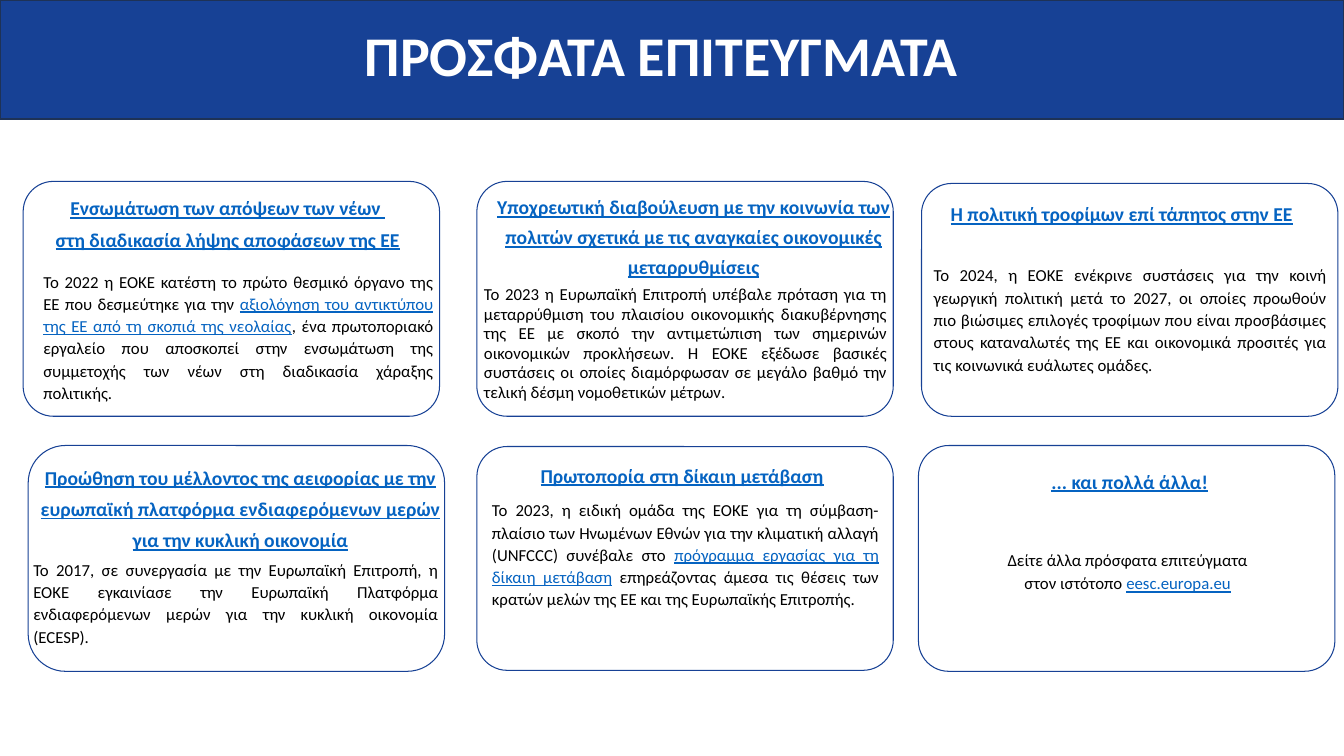
from dataclasses import dataclass
from pptx import Presentation
from pptx.dml.color import RGBColor
from pptx.enum.shapes import MSO_SHAPE
from pptx.enum.text import MSO_ANCHOR, MSO_AUTO_SIZE, PP_ALIGN
from pptx.util import Inches, Pt


@dataclass
class Theme:
    font: str = "Calibri"
    blue: RGBColor = RGBColor(0x17, 0x41, 0x95)
    edge: RGBColor = RGBColor(0x1E, 0x32, 0x56)
    link: RGBColor = RGBColor(0x05, 0x63, 0xC1)
    black: RGBColor = RGBColor(0, 0, 0)
    white: RGBColor = RGBColor(255, 255, 255)
    title: Pt = Pt(40)
    head: Pt = Pt(14)
    body: Pt = Pt(12)


theme = Theme()
CENTER, JUSTIFY = PP_ALIGN.CENTER, PP_ALIGN.JUSTIFY


def set_frame(shape, place):
    """Put a text shape in place, with no insets, and return its frame."""
    shape.left, shape.top, shape.width, shape.height = map(Inches, place)
    frame = shape.text_frame
    frame.word_wrap = True
    frame.auto_size = MSO_AUTO_SIZE.NONE
    frame.vertical_anchor = MSO_ANCHOR.TOP
    frame.margin_left = frame.margin_right = 0
    frame.margin_top = frame.margin_bottom = 0
    return frame


def style(para, size, color, space, align, bold=False):
    para.alignment = align
    para.line_spacing = Pt(space)
    para.space_before = para.space_after = Pt(0)
    font = para.font
    font.name, font.size, font.bold = theme.font, size, bold
    font.color.rgb = color


deck = Presentation()
deck.slide_width, deck.slide_height = Inches(13.33), Inches(7.5)
slide = deck.slides.add_slide(deck.slide_layouts[5])
shapes = slide.shapes

# Banner, behind the title
banner = shapes.add_shape(MSO_SHAPE.RECTANGLE, 0, 0, deck.slide_width, Inches(1.18))
banner.shadow.inherit = False
banner.fill.solid()
banner.fill.fore_color.rgb = theme.blue
banner.line.color.rgb = theme.edge
banner.line.width = Pt(1)
title = shapes.title
title._element.addprevious(banner._element)

# Title
frame = set_frame(title, (2.82, 0.41, 7.48, 0.5))
frame.text = "ΠΡΟΣΦΑΤΑ ΕΠΙΤΕΥΓΜΑΤΑ"
style(frame.paragraphs[0], theme.title, theme.white, 33, CENTER, True)

# Cards: outline and corner radius; heading place, spacing and lines;
# body place, spacing, alignment and parts (every second part is a link)
cards = [
    ((0.23, 1.8, 4.13, 2.33), 0.3,
     (0.27, 1.87, 3.98, 0.71), 22.4,
     ["Ενσωμάτωση των απόψεων των νέων ",
      "στη διαδικασία λήψης αποφάσεων της ΕΕ"],
     (0.43, 2.67, 3.87, 1.58), 15.9, JUSTIFY,
     ["Το 2022 η ΕΟΚΕ κατέστη το πρώτο θεσμικό όργανο της ΕΕ που "
      "δεσμεύτηκε για την ",
      "αξιολόγηση του αντικτύπου της ΕΕ από τη σκοπιά της νεολαίας",
      ", ένα πρωτοποριακό εργαλείο που αποσκοπεί στην ενσωμάτωση της "
      "συμμετοχής των νέων στη διαδικασία χάραξης πολιτικής."]),
    ((4.73, 1.8, 4.13, 2.33), 0.3,
     (4.88, 1.87, 4, 1.45), 21.5,
     ["Υποχρεωτική διαβούλευση με την κοινωνία των πολιτών σχετικά με τις "
      "αναγκαίες οικονομικές μεταρρυθμίσεις"],
     (4.8, 2.82, 4, 1.4), 14, JUSTIFY,
     ["Το 2023 η Ευρωπαϊκή Επιτροπή υπέβαλε πρόταση για τη μεταρρύθμιση του "
      "πλαισίου οικονομικής διακυβέρνησης της ΕΕ με σκοπό την αντιμετώπιση "
      "των σημερινών οικονομικών προκλήσεων. Η ΕΟΚΕ εξέδωσε βασικές "
      "συστάσεις οι οποίες διαμόρφωσαν σε μεγάλο βαθμό την τελική δέσμη "
      "νομοθετικών μέτρων."]),
    ((9.14, 1.82, 4.13, 2.31), 0.3,
     (9.15, 1.93, 3.95, 0.34), 22.4,
     ["Η πολιτική τροφίμων επί τάπητος στην ΕΕ"],
     (9.26, 2.61, 3.9, 1.32), 15.9, JUSTIFY,
     ["Το 2024, η ΕΟΚΕ ενέκρινε συστάσεις για την κοινή γεωργική πολιτική "
      "μετά το 2027, οι οποίες προωθούν πιο βιώσιμες επιλογές τροφίμων που "
      "είναι προσβάσιμες στους καταναλωτές της ΕΕ και οικονομικά προσιτές "
      "για τις κοινωνικά ευάλωτες ομάδες."]),
    ((0.28, 4.42, 4.13, 2.24), 0.37,
     (0.32, 4.54, 4.13, 0.91), 22.4,
     ["Προώθηση του μέλλοντος της αειφορίας με την ευρωπαϊκή πλατφόρμα "
      "ενδιαφερόμενων μερών για την κυκλική οικονομία"],
     (0.33, 5.53, 4.02, 0.89), 15.9, JUSTIFY,
     ["Το 2017, σε συνεργασία με την Ευρωπαϊκή Επιτροπή, η ΕΟΚΕ εγκαινίασε "
      "την Ευρωπαϊκή Πλατφόρμα ενδιαφερόμενων μερών για την κυκλική "
      "οικονομία (ECESP)."]),
    ((4.73, 4.43, 4.13, 2.22), 0.3,
     (4.86, 4.52, 3.81, 0.33), 22.4,
     ["Πρωτοπορία στη δίκαιη μετάβαση"],
     (4.88, 4.94, 3.84, 1.25), 15.9, JUSTIFY,
     ["Το 2023, η ειδική ομάδα της ΕΟΚΕ για τη σύμβαση-πλαίσιο των Ηνωμένων "
      "Εθνών για την κλιματική αλλαγή (UNFCCC) συνέβαλε στο ",
      "πρόγραμμα εργασίας για τη δίκαιη μετάβαση",
      " επηρεάζοντας άμεσα τις θέσεις των κρατών μελών της ΕΕ και της "
      "Ευρωπαϊκής Επιτροπής."]),
    ((9.11, 4.42, 4.13, 2.24), 0.3,
     (10.06, 4.58, 2.29, 0.32), 22.4,
     ["... και πολλά άλλα!"],
     (9.85, 5.42, 2.67, 0.53), 16.8, CENTER,
     ["Δείτε άλλα πρόσφατα επιτεύγματα στον ιστότοπο ", "eesc.europa.eu"]),
]

for box, round_by, head_at, head_gap, lines, body_at, body_gap, align, parts in cards:
    # Outline
    card = shapes.add_shape(MSO_SHAPE.ROUNDED_RECTANGLE, *map(Inches, box))
    card.adjustments[0] = round_by / min(box[2:])
    card.shadow.inherit = False
    card.fill.background()
    card.line.color.rgb = theme.blue
    card.line.width = Pt(0.75)

    # Heading
    frame = set_frame(shapes.add_textbox(0, 0, 0, 0), head_at)
    frame.text = "\n".join(lines)
    for para in frame.paragraphs:
        style(para, theme.head, theme.link, head_gap, CENTER, True)
        para.font.underline = True

    # Body
    frame = set_frame(shapes.add_textbox(0, 0, 0, 0), body_at)
    para = frame.paragraphs[0]
    style(para, theme.body, theme.black, body_gap, align)
    for i, part in enumerate(parts):
        run = para.add_run()
        run.text = part
        if i % 2:
            run.font.color.rgb = theme.link
            run.font.underline = True

deck.save("out.pptx")
